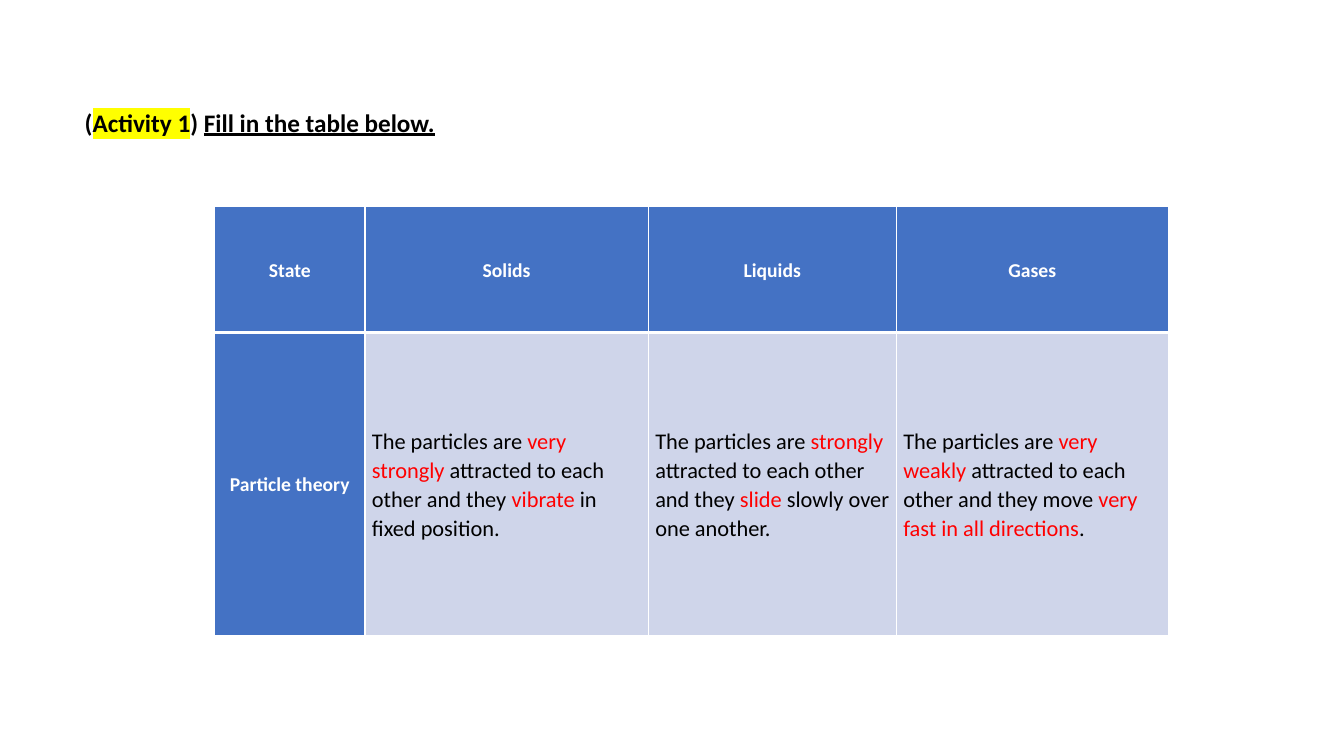
from lxml import etree
from pptx import Presentation
from pptx.dml.color import RGBColor
from pptx.enum.text import MSO_ANCHOR, MSO_AUTO_SIZE, PP_ALIGN
from pptx.oxml.ns import qn
from pptx.util import Inches, Pt

LEFT, CENTER = PP_ALIGN.LEFT, PP_ALIGN.CENTER
TOP, MIDDLE = MSO_ANCHOR.TOP, MSO_ANCHOR.MIDDLE
FIT = MSO_AUTO_SIZE.SHAPE_TO_FIT_TEXT

FONT = "Calibri"
BLACK, WHITE, RED = "000000", "FFFFFF", "FF0000"
BLUE, PALE, YELLOW = "4472C4", "CFD5EA", "FFFF00"
TITLE_ONLY = 5

COLS = [1.49, 2.81, 2.46, 2.7]
ROWS = [1.25, 3.01]
STATES = ["State", "Solids", "Liquids", "Gases"]
# Every second run is a filled-in answer.
THEORY = [
    ["The particles are ", "very strongly ",
     "attracted to each other and they ", "vibrate ", "in fixed position."],
    ["The particles are ", "strongly ",
     "attracted to each other and they ", "slide ",
     "slowly over one another."],
    ["The particles are ", "very weakly ",
     "attracted to each other and they move ",
     "very fast in all directions", "."],
]


def color(code):
    """Turn a hex string into a colour."""
    return RGBColor.from_string(code)


def add_run(para, text, size, code, bold=False, line=None, mark=None):
    """Add one run, with an optional underline and highlight."""
    run = para.add_run()
    run.text = text
    font = run.font
    font.size, font.bold, font.underline = Pt(size), bold, line
    font.color.rgb = color(code)
    font.name = FONT
    if mark:
        light = etree.Element(qn("a:highlight"))
        etree.SubElement(light, qn("a:srgbClr"), val=mark)
        font.fill  # the solid fill must come before the highlight
        run._r.rPr.find(qn("a:solidFill")).addnext(light)


def add_title(slide):
    """Place and write the activity heading."""
    title = slide.shapes.title
    title.left, title.top = Inches(0.74), Inches(0.71)
    title.width, title.height = Inches(3.7), Inches(0.71)
    frame = title.text_frame
    frame.word_wrap, frame.auto_size = False, FIT
    frame.vertical_anchor = TOP
    para = frame.paragraphs[0]
    para.alignment, para.line_spacing = LEFT, 2.0
    para.space_before, para.space_after = Pt(0), Pt(8)
    add_run(para, "(", 18, BLACK, True)
    add_run(para, "Activity 1", 18, BLACK, True, mark=YELLOW)
    add_run(para, ") ", 18, BLACK, True)
    add_run(para, "Fill in the table below.", 18, BLACK, True, line=True)


def set_edges(cell, top, bottom):
    """Draw white borders; top and bottom widths are in points."""
    props = cell._tc.get_or_add_tcPr()
    widths = {"L": 1, "R": 1, "T": top, "B": bottom}
    for spot, (side, width) in enumerate(widths.items()):
        edge = etree.Element(qn("a:ln" + side), w=str(Pt(width)))
        fill = etree.SubElement(edge, qn("a:solidFill"))
        etree.SubElement(fill, qn("a:srgbClr"), val=WHITE)
        props.insert(spot, edge)


def set_cell(cell, fill, align):
    """Format a cell and return its paragraph."""
    cell.fill.solid()
    cell.fill.fore_color.rgb = color(fill)
    cell.vertical_anchor = MIDDLE
    cell.margin_left = cell.margin_right = Inches(0.07)
    cell.margin_top = cell.margin_bottom = 0
    para = cell.text_frame.paragraphs[0]
    para.alignment, para.line_spacing = align, 1.07
    return para


def add_head(cell, text):
    """Write a blue heading cell."""
    add_run(set_cell(cell, BLUE, CENTER), text, 14, WHITE, True)


def add_body(cell, parts):
    """Write a pale cell with its answers in red."""
    para = set_cell(cell, PALE, LEFT)
    for spot, text in enumerate(parts):
        add_run(para, text, 16, RED if spot % 2 else BLACK)


def add_grid(slide):
    """Build the table of states and particle theory."""
    frame = slide.shapes.add_table(
        len(ROWS), len(COLS), Inches(2.13), Inches(2.05),
        Inches(sum(COLS)), Inches(sum(ROWS)))
    table = frame.table
    for col, width in zip(table.columns, COLS):
        col.width = Inches(width)
    for row, height in zip(table.rows, ROWS):
        row.height = Inches(height)
    for col, text in enumerate(STATES):
        add_head(table.cell(0, col), text)
        set_edges(table.cell(0, col), 1, 3)
        set_edges(table.cell(1, col), 3, 1)
    add_head(table.cell(1, 0), "Particle theory")
    for col, parts in enumerate(THEORY, 1):
        add_body(table.cell(1, col), parts)


def main():
    """Build and save the slide."""
    deck = Presentation()
    deck.slide_width, deck.slide_height = Inches(13.33), Inches(7.5)
    slide = deck.slides.add_slide(deck.slide_layouts[TITLE_ONLY])
    add_title(slide)
    add_grid(slide)
    deck.save("out.pptx")


main()
